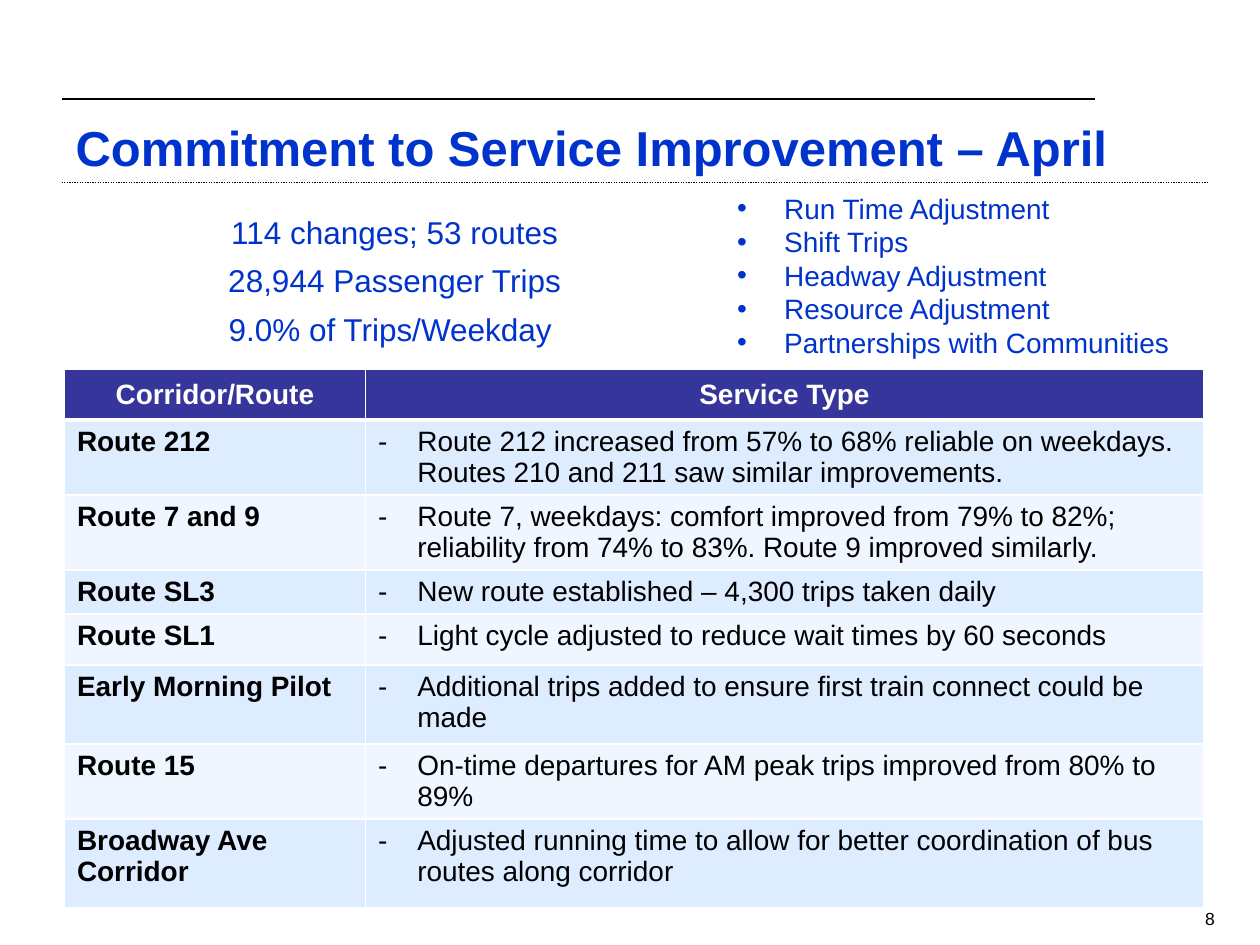
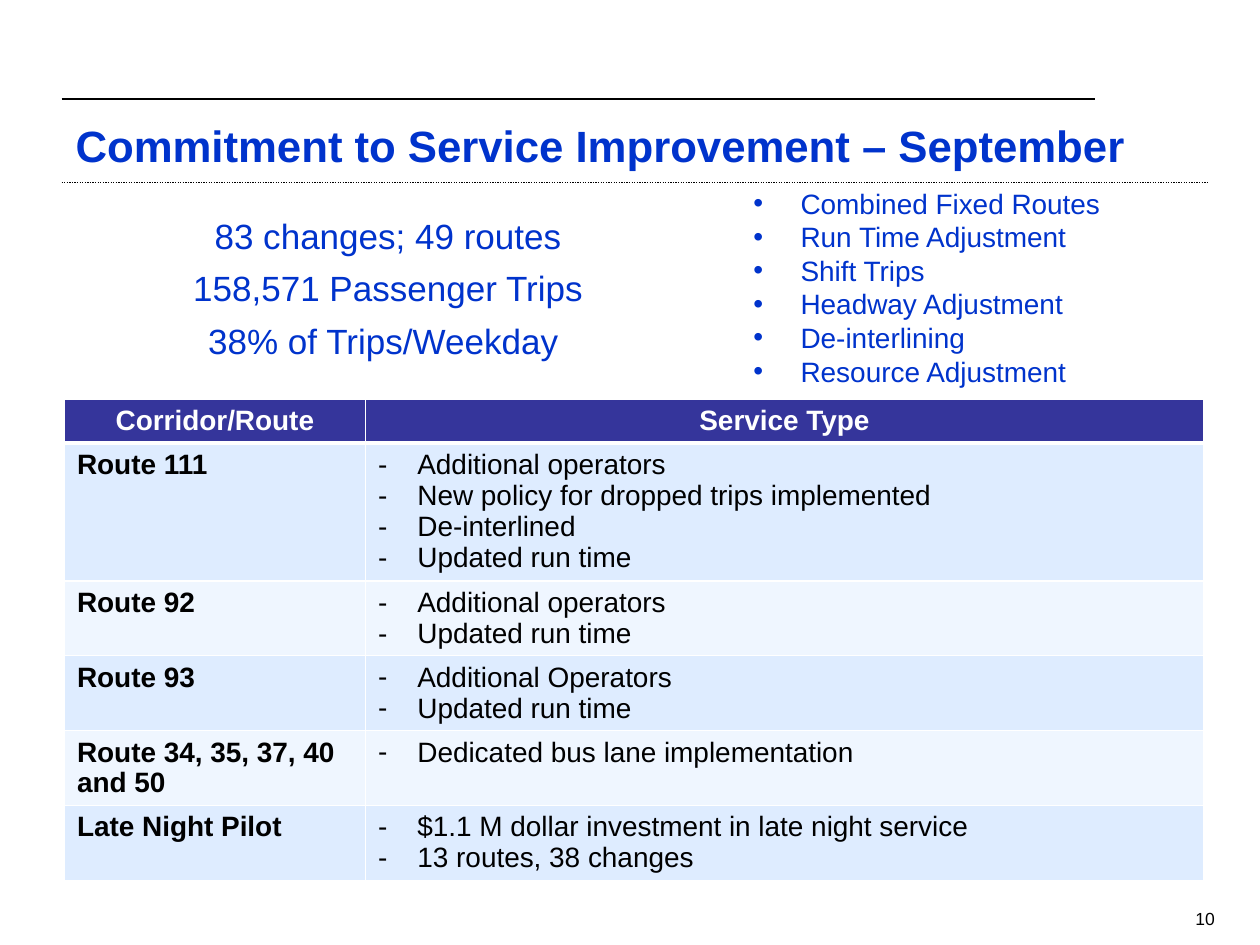
from lxml.etree import SubElement as Sub
from pptx import Presentation
from pptx.dml.color import RGBColor as Rgb
from pptx.enum.dml import MSO_LINE as Dash
from pptx.enum.shapes import MSO_CONNECTOR as Link
from pptx.enum.text import MSO_ANCHOR as Anchor, MSO_AUTO_SIZE as Fit, PP_ALIGN as Align
from pptx.oxml.ns import qn
from pptx.util import Cm, Pt

FONT = "Arial"
BLUE = Rgb(0x00, 0x33, 0xCC)
NAVY = Rgb(0x35, 0x35, 0x9B)
PALE = Rgb(0xDE, 0xEC, 0xFF)
MIST = Rgb(0xEF, 0xF6, 0xFF)
BLACK = Rgb(0, 0, 0)
WHITE = Rgb(0xFF, 0xFF, 0xFF)

HEADS = ("Corridor/Route", "Service Type")
COLS = (6.07, 16.89)
PITCH = Pt(17.7)

APRIL = {
    "title": "Commitment to Service Improvement – April",
    "size": 28,
    "page": "8",
    "stats": ("114 changes; 53 routes", "28,944 Passenger Trips", "9.0% of Trips/Weekday "),
    "stat_box": (1.3, 4.17, 13.31, 3.3),
    "stat_size": 18,
    "kinds": ("Run Time Adjustment", "Shift Trips", "Headway Adjustment",
              "Resource Adjustment", "Partnerships with Communities"),
    "kind_box": (14.61, 3.73, 9.68, 3.68),
    "grid_at": (1.3, 7.44),
    "heights": (1.03, 1.51, 1.51, 0.89, 1.03, 1.59, 1.51, 1.79),
    "rows": (
        ("Route 212", ["Route 212 increased from 57% to 68% reliable on weekdays. "
                       "Routes 210 and 211 saw similar improvements."]),
        ("Route 7 and 9", ["Route 7, weekdays: comfort improved from 79% to 82%; "
                           "reliability from 74% to 83%. Route 9 improved similarly."]),
        ("Route SL3", ["New route established – 4,300 trips taken daily"]),
        ("Route SL1", ["Light cycle adjusted to reduce wait times by 60 seconds"]),
        ("Early Morning Pilot", ["Additional trips added to ensure first train connect "
                                 "could be made"]),
        ("Route 15", ["On-time departures for AM peak trips improved from 80% to 89%"]),
        ("Broadway Ave Corridor", ["Adjusted running time to allow for better coordination "
                                   "of bus routes along corridor"]),
    ),
}

FALL = {
    "title": "Commitment to Service Improvement – September",
    "size": 25,
    "page": "10",
    "stats": ("83 changes; 49 routes", "158,571 Passenger Trips", "38% of Trips/Weekday "),
    "stat_box": (1.17, 4.19, 13.31, 3.25),
    "stat_size": 20,
    "kinds": ("Combined Fixed Routes", "Run Time Adjustment", "Shift Trips",
              "Headway Adjustment", "De-interlining", "Resource Adjustment"),
    "kind_box": (14.94, 3.63, 9.68, 4.37),
    "grid_at": (1.3, 8.05),
    "heights": (0.88, 2.78, 1.51, 1.51, 1.51, 1.51),
    "rows": (
        ("Route 111", ["Additional operators", "New policy for dropped trips implemented",
                       "De-interlined", "Updated run time"]),
        ("Route 92", ["Additional operators", "Updated run time"]),
        ("Route 93", ["Additional Operators", "Updated run time"]),
        ("Route 34, 35, 37, 40 and 50", ["Dedicated bus lane implementation"]),
        ("Late Night Pilot", ["$1.1 M dollar investment in late night service",
                              "13 routes, 38 changes"]),
    ),
}


def style(para, size, color, bold=False, align=Align.LEFT):
    para.alignment = align
    font = para.font
    font.name, font.size, font.bold = FONT, Pt(size), bold
    font.color.rgb = color


def mark(para, char, indent):
    props = para._p.get_or_add_pPr()
    props.set("marL", str(Cm(indent)))
    props.set("indent", str(-Cm(indent)))
    Sub(props, qn("a:buFont")).set("typeface", FONT)
    Sub(props, qn("a:buChar")).set("char", char)


def fill_text(frame, lines, pitch=None):
    for i, line in enumerate(lines):
        para = frame.add_paragraph() if i else frame.paragraphs[0]
        para.text = line
        if pitch:
            para.line_spacing = pitch
        yield para


def add_box(slide, box):
    frame = slide.shapes.add_textbox(*map(Cm, box)).text_frame
    frame.word_wrap = True
    return frame


def add_rule(slide, left, right, top, width, dash=None):
    line = slide.shapes.add_connector(Link.STRAIGHT, Cm(left), Cm(top), Cm(right), Cm(top))
    line.line.color.rgb = BLACK
    line.line.width = Pt(width)
    if dash:
        line.line.dash_style = dash
    Sub(line._element.spPr, qn("a:effectLst"))


def add_frame(slide, title, size, page):
    add_rule(slide, 1.24, 22.07, 2, 1)
    add_rule(slide, 1.24, 24.36, 3.68, 0.75, Dash.ROUND_DOT)
    head = slide.shapes.title
    head.left, head.top, head.width, head.height = map(Cm, (1.27, 2.38, 22.86, 1.9))
    frame = head.text_frame
    frame.auto_size, frame.vertical_anchor = Fit.NONE, Anchor.TOP
    for para in fill_text(frame, [title], 0.9):
        style(para, size, BLUE, True)
    foot = add_box(slide, (22.63, 18.19, 2.11, 0.64))
    foot.vertical_anchor = Anchor.MIDDLE
    for para in fill_text(foot, [page]):
        style(para, 10, BLACK, align=Align.RIGHT)


def add_stats(slide, box, lines, size):
    for para in fill_text(add_box(slide, box), lines):
        para.space_after = Pt(6)
        style(para, size, BLUE, align=Align.CENTER)


def add_kinds(slide, box, lines):
    for para in fill_text(add_box(slide, box), lines):
        mark(para, "•", 0.95)
        style(para, 16, BLUE)


def paint(cell, color, top, bottom):
    props = cell._tc.get_or_add_tcPr()
    for side, width in (("L", 1), ("R", 1), ("T", top), ("B", bottom)):
        edge = Sub(props, qn("a:ln" + side), w=str(Pt(width)))
        solid = Sub(edge, qn("a:solidFill"))
        Sub(solid, qn("a:srgbClr"), val=str(WHITE))
    cell.fill.solid()
    cell.fill.fore_color.rgb = color


def add_grid(slide, at, heights, rows):
    size = (sum(COLS), sum(heights))
    grid = slide.shapes.add_table(len(heights), 2, *map(Cm, at + size)).table
    for col, width in zip(grid.columns, COLS):
        col.width = Cm(width)
    for row, height in zip(grid.rows, heights):
        row.height = Cm(height)
    for i, text in enumerate(HEADS):
        cell = grid.cell(0, i)
        paint(cell, NAVY, 1, 3)
        cell.vertical_anchor = Anchor.MIDDLE
        for para in fill_text(cell.text_frame, [text], PITCH):
            style(para, 16, WHITE, True, Align.CENTER)
    for i, (route, notes) in enumerate(rows, 1):
        name, note = grid.cell(i, 0), grid.cell(i, 1)
        for cell in (name, note):
            paint(cell, PALE if i % 2 else MIST, 3 if i == 1 else 1, 1)
        for para in fill_text(name.text_frame, [route], PITCH):
            style(para, 16, BLACK, True)
        for para in fill_text(note.text_frame, notes, PITCH):
            mark(para, "-", 0.79)
            style(para, 16, BLACK)


def add_month(deck, month):
    slide = deck.slides.add_slide(deck.slide_layouts[5])
    add_frame(slide, month["title"], month["size"], month["page"])
    add_grid(slide, month["grid_at"], month["heights"], month["rows"])
    add_stats(slide, month["stat_box"], month["stats"], month["stat_size"])
    add_kinds(slide, month["kind_box"], month["kinds"])


def main():
    deck = Presentation()
    deck.slide_width, deck.slide_height = Cm(25.4), Cm(19.05)
    for month in (APRIL, FALL):
        add_month(deck, month)
    deck.save("out.pptx")


if __name__ == "__main__":
    main()
